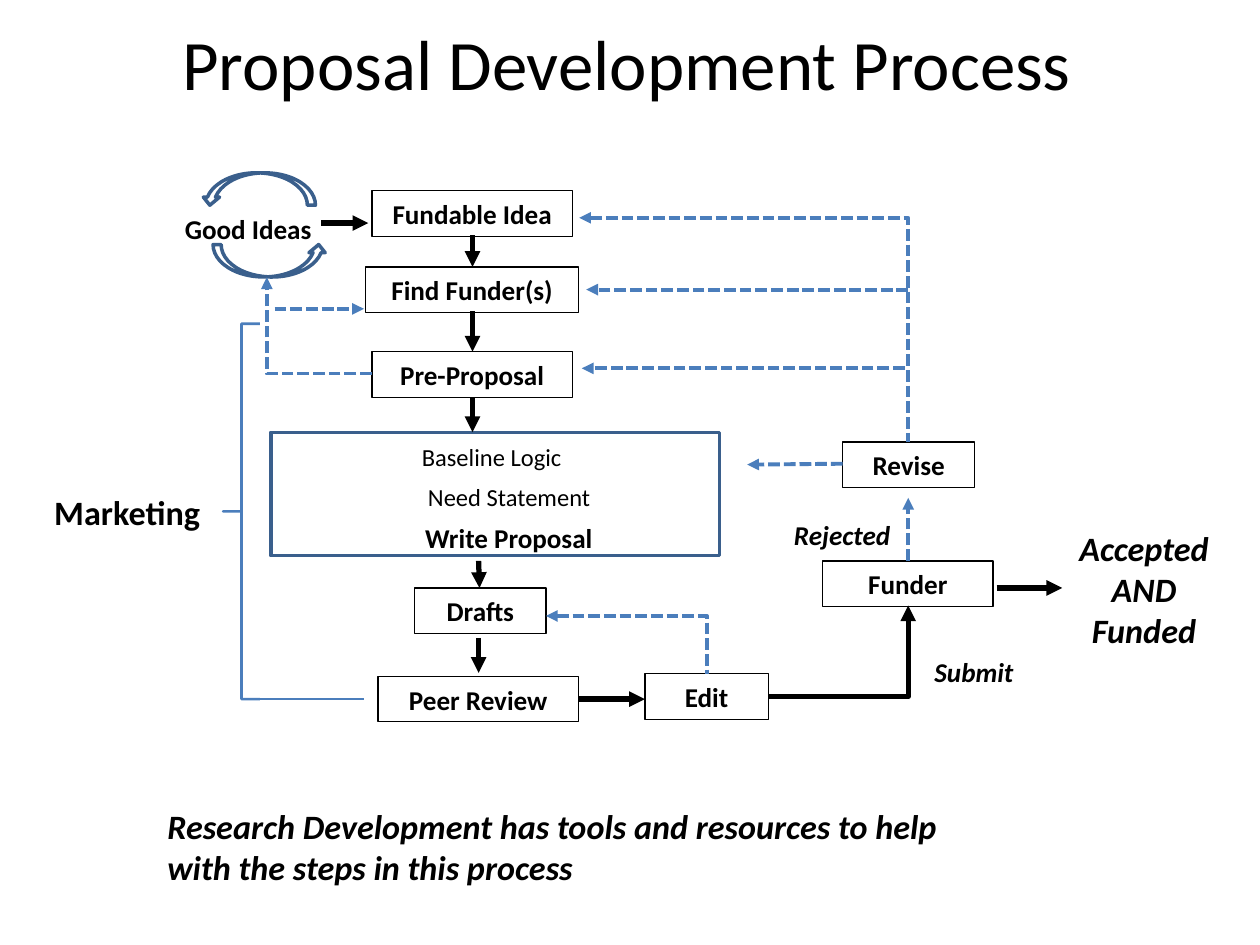
"""Build a one-slide flowchart of the proposal development process."""
from dataclasses import dataclass

from lxml.etree import SubElement
from pptx import Presentation
from pptx.dml.color import RGBColor
from pptx.enum.dml import MSO_LINE
from pptx.enum.shapes import MSO_CONNECTOR as Connector, MSO_SHAPE as Shape
from pptx.enum.text import MSO_ANCHOR as Anchor, PP_ALIGN as Align
from pptx.oxml.ns import qn
from pptx.util import Pt


@dataclass(frozen=True)
class Theme:
    """Colours, font and sizes of the slide."""
    font: str = "Calibri"
    black: RGBColor = RGBColor(0x00, 0x00, 0x00)
    blue: RGBColor = RGBColor(0x4B, 0x7E, 0xBC)
    navy: RGBColor = RGBColor(0x3A, 0x5F, 0x8C)
    title: float = 40.5
    large: float = 19.5
    label: float = 15.5
    detail: float = 14
    box_line: float = 0.75
    outline: float = 2
    bracket: float = 1.5
    feedback: float = 2.25
    flow: float = 3


THEME = Theme()


def points(*values):
    """Convert numbers to point lengths."""
    return [Pt(value) for value in values]


def write(shape, text, size, bold=True, italic=False, align=Align.CENTER):
    """Set and format the text of a shape."""
    frame = shape.text_frame
    frame.text = text
    frame.word_wrap = True
    frame.vertical_anchor = Anchor.MIDDLE
    paragraph = frame.paragraphs[0]
    paragraph.alignment = align
    font = paragraph.runs[0].font
    font.name, font.size = THEME.font, Pt(size)
    font.bold, font.italic = bold, italic
    font.color.rgb = THEME.black


def add_title(slide, text):
    """Place the title across the top of the slide."""
    title = slide.shapes.title
    title.left, title.top, title.width, title.height = points(-1.5, 0, 720, 70.5)
    write(title, text, THEME.title, bold=False)


def add_label(slide, text, bounds, size=THEME.label, **style):
    """Add a text box."""
    label = slide.shapes.add_textbox(*points(*bounds))
    write(label, text, size, **style)
    return label


def add_outline(slide, kind, bounds, color, width):
    """Add an unfilled preset shape."""
    shape = slide.shapes.add_shape(kind, *points(*bounds))
    shape.shadow.inherit = False
    shape.fill.background()
    shape.line.color.rgb = color
    shape.line.width = Pt(width)
    return shape


def add_step(slide, text, left, top, width):
    """Add a bordered process step."""
    bounds = (left, top, width, 26)
    step = add_outline(slide, Shape.RECTANGLE, bounds, THEME.black, THEME.box_line)
    write(step, text, THEME.label)


def add_line(slide, start, end, color, width, kind=Connector.STRAIGHT):
    """Add a connector without shadow."""
    line = slide.shapes.add_connector(kind, *points(*start, *end))
    line.line.color.rgb = color
    line.line.width = Pt(width)
    SubElement(line._element.spPr, qn("a:effectLst"))
    return line


def add_arrow(slide, start, end, feedback=False, bent=False, head="tailEnd"):
    """Add a flow arrow or dashed feedback arrow; a bend runs sideways first."""
    color, width = (THEME.blue, THEME.feedback) if feedback else (THEME.black, THEME.flow)
    kind = Connector.ELBOW if bent else Connector.STRAIGHT
    arrow = add_line(slide, start, end, color, width, kind)
    if feedback:
        arrow.line.dash_style = MSO_LINE.SQUARE_DOT
    properties = arrow._element.spPr
    if bent:
        properties.find(qn("a:prstGeom")).set("prst", "bentConnector2")
    SubElement(properties.find(qn("a:ln")), qn(f"a:{head}"), type="triangle")


def add_steps(slide):
    """Add the boxes of the process."""
    for step in (
        ("Fundable Idea", 212.5, 109, 114.5),
        ("Find Funder(s)", 209, 152.5, 121.5),
        ("Pre-Proposal", 212.5, 201, 114.5),
        ("Drafts", 237, 336, 75),
        ("Peer Review", 216, 386.5, 114.5),
        ("Edit", 368.5, 385, 70.5),
        ("Funder", 470, 320.5, 97.5),
        ("Revise", 481.5, 252.5, 75.5),
    ):
        add_step(slide, *step)
    bounds = (154.75, 247, 256.5, 70.5)
    add_outline(slide, Shape.RECTANGLE, bounds, THEME.navy, THEME.outline)


def add_idea_cycle(slide):
    """Add the two curved arrows around the good ideas."""
    for left, top, rotation in ((145, 116.5, 270), (138.5, 75.5, 90)):
        curve = add_outline(slide, Shape.CURVED_RIGHT_ARROW, (left, top, 18.5, 65),
                            THEME.navy, THEME.outline)
        curve.rotation = rotation
    add_label(slide, "Good Ideas", (98.5, 117.5, 98.5, 26), align=Align.LEFT)


def add_arrows(slide):
    """Connect the steps with flow and feedback arrows."""
    for start, end in (
        ((183.5, 127.5), (210.5, 127.5)),
        ((270, 134.5), (270, 152.5)),
        ((270, 178), (270, 201)),
        ((270, 227), (270, 247)),
        ((273.5, 320.5), (274, 336)),
        ((273.5, 364.5), (273.5, 384.5)),
        ((331, 399.5), (368.5, 399.5)),
        ((569.5, 336), (607, 336)),
    ):
        add_arrow(slide, start, end)
    add_arrow(slide, (439, 398), (519, 346), bent=True)

    for start, end in (
        ((157, 176.5), (208, 176.5)),
        ((519, 320.5), (519, 284.5)),
        ((519, 165.5), (335, 165.5)),
        ((517, 210.5), (332.5, 210.5)),
        ((481.5, 265), (427, 265.5)),
    ):
        add_arrow(slide, start, end, feedback=True)
    add_arrow(slide, (212.5, 213.5), (152.5, 158.5), feedback=True, bent=True)
    for start, end in (((312, 352), (404, 385)), ((331, 124.5), (519, 252.5))):
        add_arrow(slide, start, end, feedback=True, bent=True, head="headEnd")


def add_marketing(slide):
    """Add the marketing label and its bracket."""
    label = add_label(slide, "Marketing", (21.5, 277, 102.5, 31), THEME.large)
    label.text_frame.word_wrap = False
    bracket = add_outline(slide, Shape.LEFT_BRACE, (127.5, 185, 21, 214.5),
                          THEME.blue, THEME.bracket)
    bracket.adjustments[0] = 0
    add_line(slide, (137.5, 399.5), (208, 399.5), THEME.blue, THEME.bracket)


def add_labels(slide):
    """Add the proposal parts, the outcomes and the closing remark."""
    for text, left, top in (("Baseline Logic", 152.5, 248.5), ("Need Statement", 162.5, 271.5)):
        add_label(slide, text, (left, top, 257, 24.5), THEME.detail, bold=False)
    add_label(slide, "Write Proposal", (159, 294, 263.5, 26))
    add_label(slide, "Submit", (522, 371, 69, 26), italic=True)
    add_label(slide, "Rejected", (419, 292.5, 124.5, 26), italic=True)
    add_label(slide, "Accepted AND Funded", (608.5, 297.5, 90.5, 78), THEME.large, italic=True)
    remark = "Research Development has tools and resources to help with the steps in this process"
    add_label(slide, remark, (88.5, 456.5, 492, 54.5), THEME.large, italic=True, align=Align.LEFT)


def main():
    """Assemble and save the slide."""
    presentation = Presentation()
    presentation.slide_width, presentation.slide_height = points(720, 540)
    slide = presentation.slides.add_slide(presentation.slide_layouts[5])
    add_title(slide, "Proposal Development Process")
    add_steps(slide)
    add_idea_cycle(slide)
    add_arrows(slide)
    add_marketing(slide)
    add_labels(slide)
    presentation.save("out.pptx")


if __name__ == "__main__":
    main()
